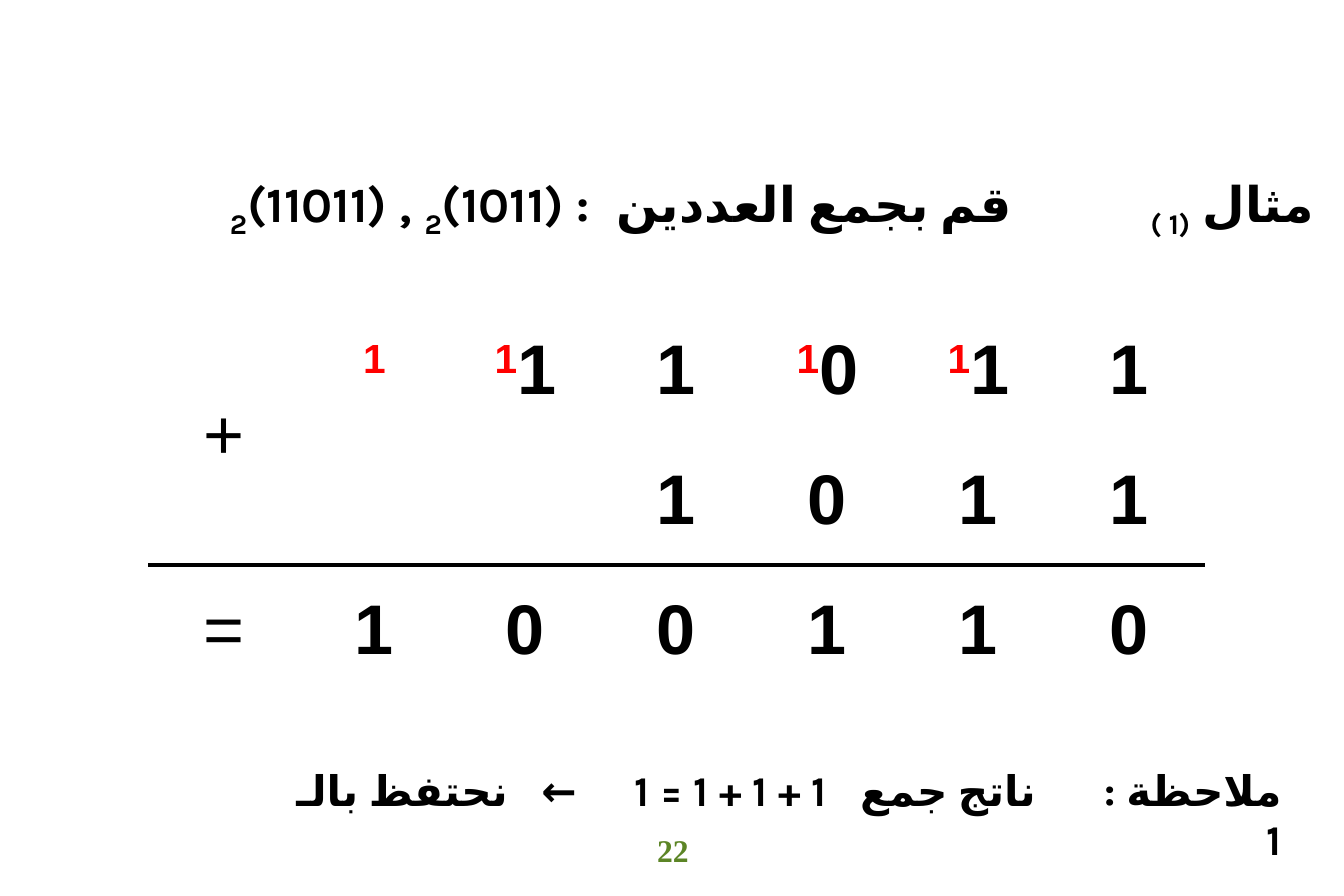
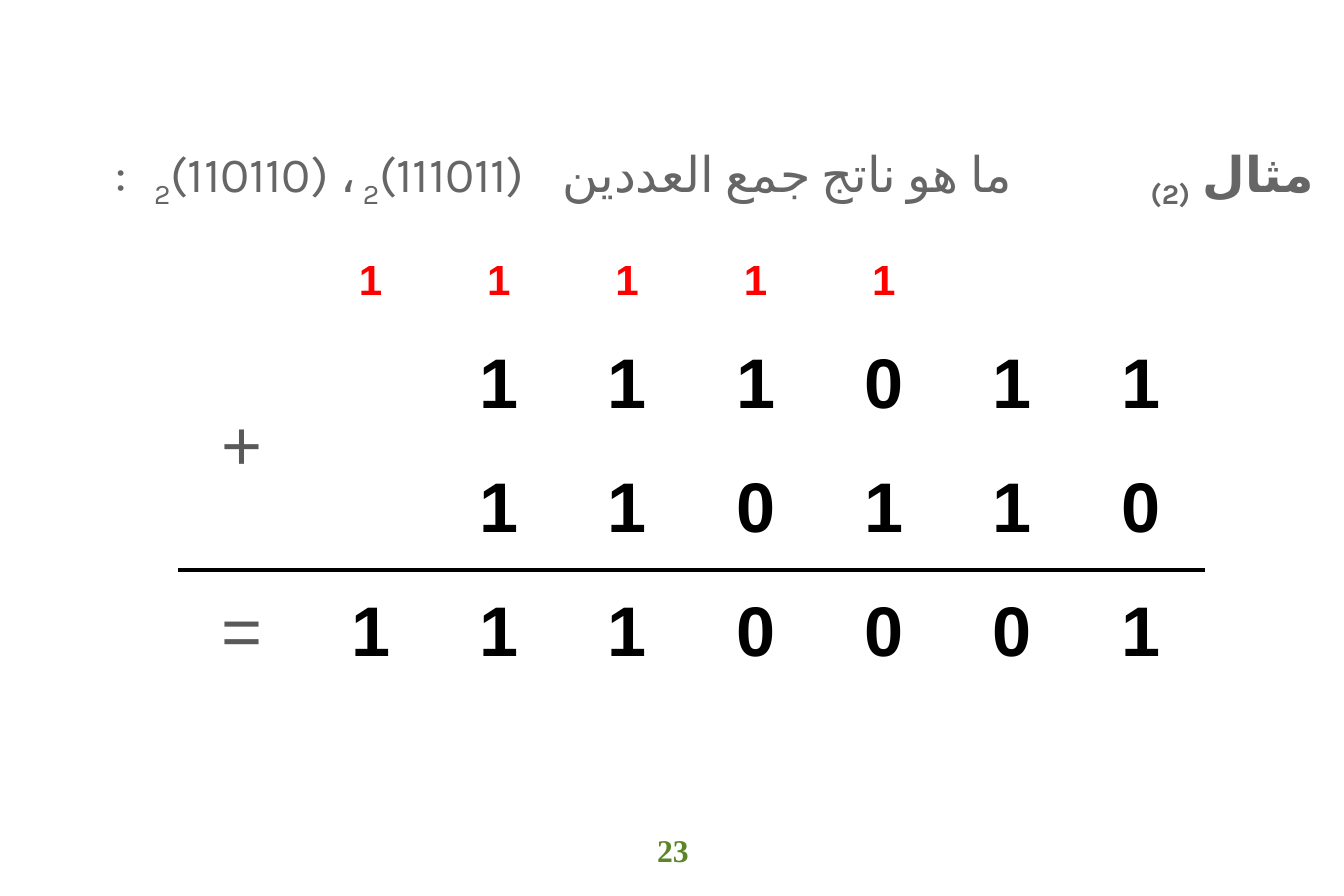
from lxml.etree import SubElement
from pptx import Presentation
from pptx.dml.color import RGBColor
from pptx.enum.text import MSO_ANCHOR, PP_ALIGN
from pptx.oxml.ns import qn
from pptx.util import Pt

PX = 7234
LOOK = dict(
    black="000000", red="FF0000", green="5C8526", gray="666666", dim="595959",
    face="Arial", serif="Times New Roman", script="Karla",
    head=28, digit=40, note=24, foot=18,
)
PLAIN = "{2D5ABB26-0587-4C30-8999-92F81FD0307C}"

SLIDES = [
    dict(
        page="22", top=172, high=622, ink="black", sign="black",
        head=[("مثال ", 1, 0), ("(1 )", 1, -25), (" ", 1, 0, 126),
              ("قم بجمع العددين", 1, 0), (" ", 1, 0, 14), (": (1011)", 1, 0),
              ("2", 1, -25), (" , (11011)", 1, 0), ("2", 1, -25)],
        grid=(148, 221, 1057), rows=[84, 130, 130, 130], carry=0,
        sums=["       ", "+ 11011", "   1011", "=100110"], raised={1: " 11 11 "},
        note=[("ملاحظة :", 1, 0), (" ", 1, 0, 58), ("ناتج جمع", 1, 0), (" ", 1, 0, 23),
              ("1 + 1 + 1 = 1", 1, 0), (" ", 1, 0, 47), ("←", 1, 0), (" ", 1, 0, 23),
              ("نحتفظ بالـ 1", 1, 0)],
    ),
    dict(
        page="23", top=142, high=671, ink="gray", sign="dim",
        head=[("مثال ", 1, 0), ("(2)", 1, -25), (" ", 1, 0, 126),
              ("ما هو ناتج جمع العددين", 0, 0), (" ", 0, 0, 27), ("(111011)", 0, 0),
              ("2 ", 0, -25), ("، (110110)", 0, 0), ("2", 0, -25),
              (" ", 0, 0, 16), (":", 0, 0)],
        grid=(178, 240, 1027), rows=[82, 124, 124, 124], carry=24,
        sums=["        ", "+ 111011", "  110110", "=1110001"], raised={0: " 11111  "},
        note=[],
    ),
]


def write(par, runs, size, ink, face="face"):
    for text, bold, base, *gap in runs:
        run = par.add_run()
        run.text = text
        form = dict(size=Pt(LOOK[size]), bold=bool(bold), name=LOOK[face])
        for key, val in form.items():
            setattr(run.font, key, val)
        run.font.color.rgb = RGBColor.from_string(LOOK[ink])
        prop = run.font._element
        if base:
            prop.set("baseline", str(base * 1000))
        if gap:
            prop.set("spc", str(gap[0] * 57))
        if par._p.get_or_add_pPr().get("rtl"):
            prop.set("lang", "ar-SA")
            SubElement(prop, qn("a:cs"), typeface=LOOK["script"])


def turn(par, hang=0):
    par.alignment = PP_ALIGN.RIGHT
    par.line_spacing = 0.97
    prop = par._p.get_or_add_pPr()
    for key, val in dict(rtl=1, marL=hang * PX, indent=-hang * PX).items():
        prop.set(key, str(val))
    SubElement(prop, qn("a:buNone"))


deck = Presentation()
deck.slide_width, deck.slide_height = 1344 * PX, 896 * PX

for data in SLIDES:
    slide = deck.slides.add_slide(deck.slide_layouts[1])
    title = slide.shapes.title._element
    title.getparent().remove(title)

    body = slide.placeholders[1]
    area = dict(left=30, top=data["top"], width=1284, height=data["high"])
    for key, val in area.items():
        setattr(body, key, val * PX)
    frame = body.text_frame
    edge = dict(margin_left=0, margin_top=PX, margin_right=0, margin_bottom=0)
    for key, val in edge.items():
        setattr(frame, key, val)
    par = frame.paragraphs[0]
    par.space_before, par.space_after = Pt(0), Pt(12.1)
    turn(par, 48)
    write(par, data["head"], "head", data["ink"])

    foot = slide.shapes.add_textbox(512 * PX, 834 * PX, 322 * PX, 43 * PX).text_frame
    for key in edge:
        setattr(foot, key, 0)
    foot.word_wrap = True
    par = foot.paragraphs[0]
    par.alignment, par.line_spacing = PP_ALIGN.CENTER, 0.93
    write(par, [(data["page"], 1, 0)], "foot", "green", "serif")

    left, top, wide = data["grid"]
    rows, cols = data["rows"], len(data["sums"][0])
    table = slide.shapes.add_table(
        len(rows), cols, left * PX, top * PX, wide * PX, sum(rows) * PX).table
    table.first_row = table.horz_banding = False
    table._tbl.tblPr.find(qn("a:tableStyleId")).text = PLAIN
    for col in table.columns:
        col.width = wide * PX // cols
    for row, high in enumerate(rows):
        table.rows[row].height = high * PX
        lift = data["raised"].get(row, " " * cols)
        for col, (sign, mark) in enumerate(zip(data["sums"][row], lift)):
            cell = table.cell(row, col)
            cell.vertical_anchor = MSO_ANCHOR.MIDDLE
            par = cell.text_frame.paragraphs[0]
            par.alignment = PP_ALIGN.CENTER
            if mark != " ":
                size, base = ("note", 0) if data["carry"] else ("digit", 30)
                write(par, [(mark, 1, base)], size, "red")
            if sign != " ":
                ink = "black" if col else data["sign"]
                write(par, [(sign, col, 0)], "digit", ink)
            if row > 1:
                side = "a:lnB" if row == 2 else "a:lnT"
                line = SubElement(cell._tc.get_or_add_tcPr(), qn(side), w=str(Pt(2.25)))
                fill = SubElement(line, qn("a:solidFill"))
                SubElement(fill, qn("a:srgbClr"), val=LOOK["black"])
            cell.fill.background()
    table.cell(1, 0).merge(table.cell(2, 0))

    if data["note"]:
        note = slide.shapes.add_textbox(277 * PX, 761 * PX, 1017 * PX, 62 * PX).text_frame
        note.word_wrap = True
        par = note.paragraphs[0]
        turn(par)
        write(par, data["note"], "note", "black")

deck.save("out.pptx")
